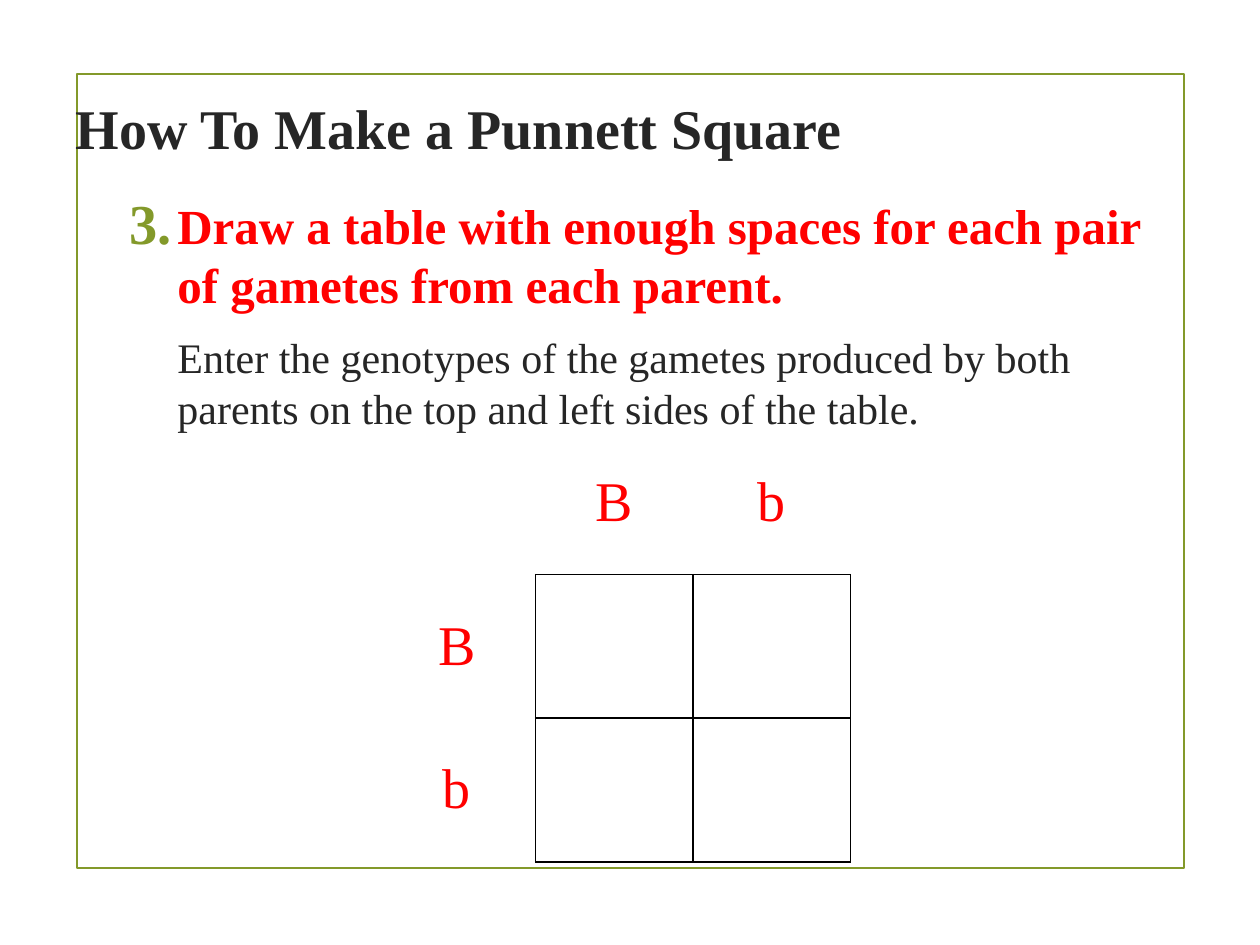
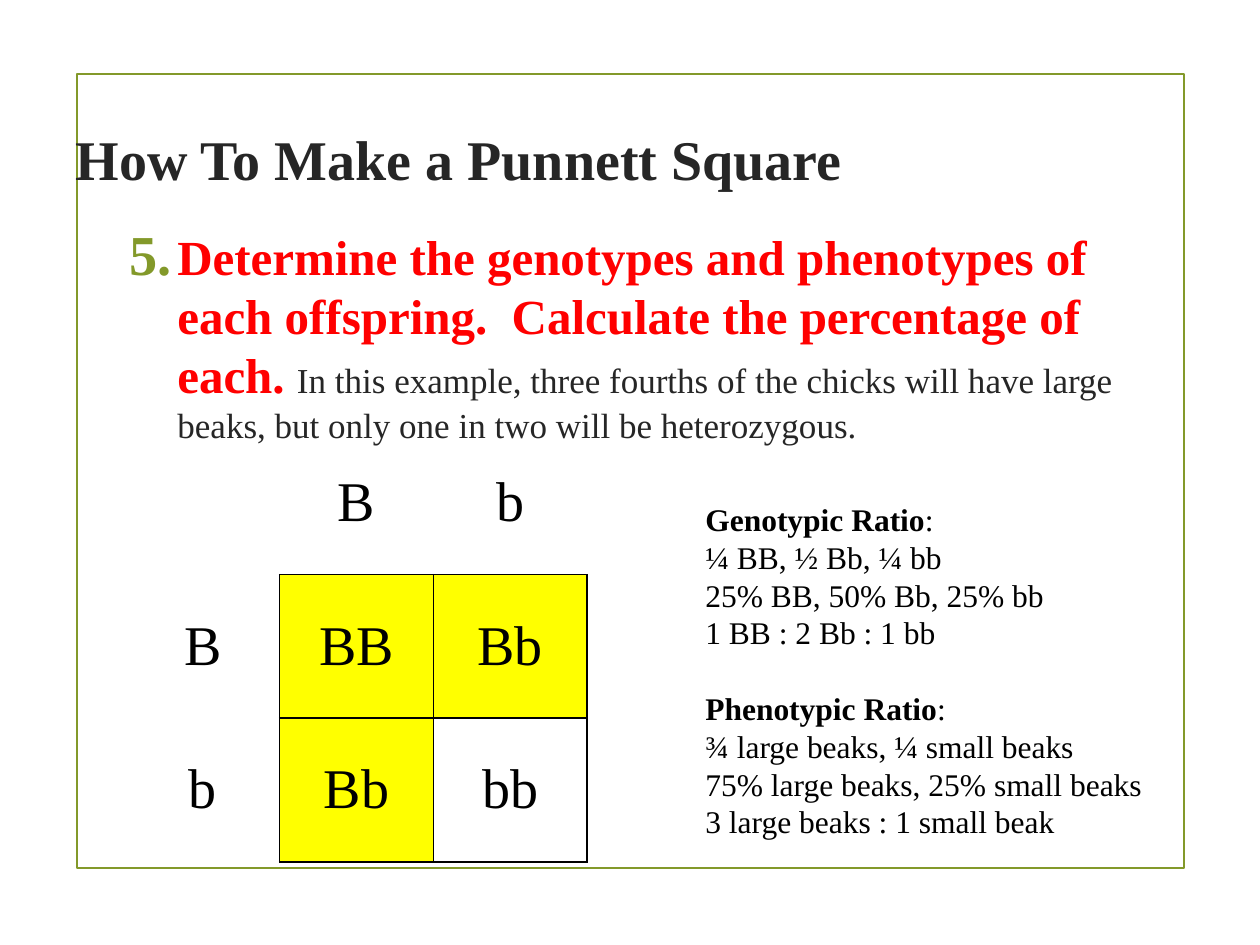
from lxml import etree
from pptx import Presentation
from pptx.dml.color import RGBColor
from pptx.enum.shapes import MSO_SHAPE
from pptx.enum.text import MSO_ANCHOR, PP_ALIGN
from pptx.oxml.ns import qn
from pptx.util import Inches, Pt

RECT = MSO_SHAPE.RECTANGLE
MIDDLE = MSO_ANCHOR.MIDDLE
LEFT, CENTER = PP_ALIGN.LEFT, PP_ALIGN.CENTER

FONT = "Times New Roman"
COLORS = {"green": "83992A", "dark": "262626", "red": "FF0000",
          "black": "000000", "yellow": "FFFF00"}
TITLE = "How To Make a Punnett Square"
ROW = 1.14

# Content: runs are (text, size, color, bold)
STEPS = [
    {
        "top": 0.42, "number": 3,
        "paras": [
            [("Draw a table with enough spaces for each pair of gametes "
              "from each parent.", 28, "red", True)],
            [("Enter the genotypes of the gametes produced by both parents "
              "on the top and left sides of the table.", 24, "dark", False)],
        ],
        "square": {"left": 3, "col": 1.25, "color": "red",
                   "cells": [["", "B", "b"], ["B", "", ""], ["b", "", ""]]},
        "ratios": [],
    },
    {
        "top": 0.67, "number": 5,
        "paras": [
            [("Determine the genotypes and phenotypes of each offspring.  "
              "Calculate the percentage of each. ", 28, "red", True),
             ("In this example, three fourths of the chicks will have large "
              "beaks, but only one in two will be heterozygous.",
              20, "dark", False)],
        ],
        "square": {"left": 1, "col": 1.22, "color": "black",
                   "cells": [["", "B", "b"], ["B", "BB", "Bb"],
                             ["b", "Bb", "bb"]]},
        "ratios": [
            ("Genotypic Ratio", ["¼ BB, ½ Bb, ¼ bb",
                                 "25% BB, 50% Bb, 25% bb",
                                 "1 BB : 2 Bb : 1 bb"]),
            ("Phenotypic Ratio", ["¾ large beaks, ¼ small beaks",
                                  "75% large beaks, 25% small beaks",
                                  "3 large beaks : 1 small beak"]),
        ],
    },
]


def rgb(name):
    return RGBColor.from_string(COLORS[name])


def style(font, size, color, bold=False):
    font.name, font.size, font.bold = FONT, Pt(size), bold
    font.color.rgb = rgb(color)


def add_para(frame, first):
    return frame.paragraphs[0] if first else frame.add_paragraph()


def add_box(slide, left, top, width, height):
    box = slide.shapes.add_textbox(*map(Inches, (left, top, width, height)))
    box.text_frame.word_wrap = True
    return box.text_frame


def add_frame(slide):
    frame = slide.shapes.add_shape(
        RECT, *map(Inches, (0.61, 0.59, 8.79, 6.3)))
    frame.shadow.inherit = False
    frame.fill.background()
    frame.line.color.rgb = rgb("green")
    frame.line.width = Pt(1.25)
    slide.shapes._spTree.insert(2, frame._element)


def add_title(slide, top):
    title = slide.shapes.title
    title.left, title.top = Inches(0.5), Inches(top)
    title.width, title.height = Inches(9.17), Inches(1.17)
    title.text_frame.text = TITLE
    title.text_frame.vertical_anchor = MIDDLE
    para = title.text_frame.paragraphs[0]
    para.alignment = LEFT
    style(para.font, 32, "dark", True)


def add_number(props, start):
    props.set("indent", str(Inches(-0.38)))
    color = etree.SubElement(props, qn("a:buClr"))
    etree.SubElement(color, qn("a:srgbClr"), val=COLORS["green"])
    etree.SubElement(props, qn("a:buSzPct"), val="115000")
    etree.SubElement(props, qn("a:buFont"), typeface=FONT)
    etree.SubElement(props, qn("a:buAutoNum"), type="arabicPeriod",
                     startAt=str(start))


def add_step(slide, top, number, paras):
    frame = add_box(slide, 0.5, top, 9, 3.25)
    for i, runs in enumerate(paras):
        para = add_para(frame, i == 0)
        props = para._p.get_or_add_pPr()
        props.set("marL", str(Inches(0.81)))
        if i == 0:
            add_number(props, number)
        else:
            para.space_before = Pt(0.2 * runs[0][1])
        para.space_after = Pt(6)
        for text, *look in runs:
            run = para.add_run()
            run.text = text
            style(run.font, *look)


def add_edge(props, side, shown):
    line = etree.SubElement(props, qn("a:ln" + side), w=str(Pt(1)))
    if shown:
        fill = etree.SubElement(line, qn("a:solidFill"))
        etree.SubElement(fill, qn("a:srgbClr"), val=COLORS["black"])
    else:
        etree.SubElement(line, qn("a:noFill"))


def add_square(slide, left, col, color, cells):
    count = len(cells)
    table = slide.shapes.add_table(
        count, count, Inches(left), Inches(3.42),
        Inches(col * count), Inches(ROW * count)).table
    table.first_row = table.horz_banding = False
    for i in range(count):
        table.columns[i].width = Inches(col)
        table.rows[i].height = Inches(ROW)
    for r, texts in enumerate(cells):
        for c, text in enumerate(texts):
            cell = table.cell(r, c)
            cell.text = text
            cell.vertical_anchor = MIDDLE
            para = cell.text_frame.paragraphs[0]
            para.alignment = CENTER
            style(para.font, 32, color)
            # Only edges that touch an offspring cell are drawn
            inner = r > 0 and c > 0
            props = cell._tc.get_or_add_tcPr()
            for side, shown in (("L", inner), ("R", r > 0),
                                ("T", inner), ("B", c > 0)):
                add_edge(props, side, shown)
            # Offspring with a dominant allele are marked
            if inner and "B" in text:
                cell.fill.solid()
                cell.fill.fore_color.rgb = rgb("yellow")
            else:
                cell.fill.background()


def add_ratios(slide, ratios):
    frame = add_box(slide, 5.5, 3.92, 4.33, 2.83)
    for i, (name, lines) in enumerate(ratios):
        head = add_para(frame, i == 0)
        if i:
            head.space_before = Pt(21.6)
        for text, bold in ((name, True), (":", False)):
            run = head.add_run()
            run.text = text
            style(run.font, 18, "black", bold)
        for text in lines:
            para = frame.add_paragraph()
            para.text = text
            style(para.font, 18, "black")


def main():
    deck = Presentation()
    deck.slide_width, deck.slide_height = Inches(10), Inches(7.5)
    for step in STEPS:
        slide = deck.slides.add_slide(deck.slide_layouts[5])
        add_frame(slide)
        add_title(slide, step["top"])
        add_step(slide, step["top"] + 1.08, step["number"], step["paras"])
        add_square(slide, **step["square"])
        if step["ratios"]:
            add_ratios(slide, step["ratios"])
    deck.save("out.pptx")


if __name__ == "__main__":
    main()
